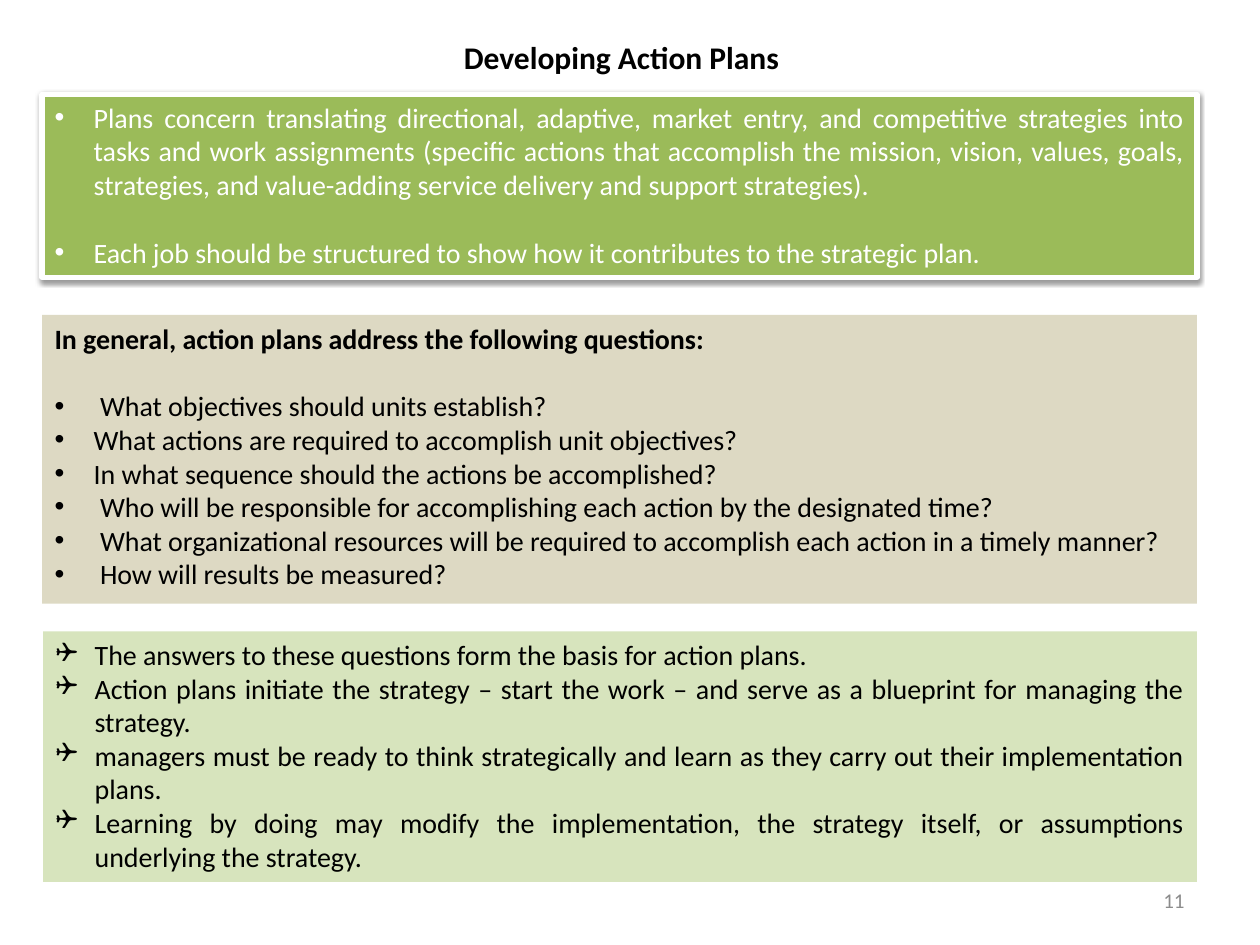
from dataclasses import dataclass
from lxml.etree import SubElement
from pptx import Presentation
from pptx.dml.color import RGBColor as Color
from pptx.enum.shapes import MSO_SHAPE as Shape
from pptx.enum.text import MSO_ANCHOR as Anchor, MSO_AUTO_SIZE as AutoSize, PP_ALIGN as Align
from pptx.oxml.ns import qn
from pptx.util import Cm, Pt


@dataclass(frozen=True)
class Theme:
    font: str = "Calibri"
    title: int = 18
    body: int = 16
    number: int = 12
    blank_line: float = 19.5
    black: str = "000000"
    white: str = "FFFFFF"
    gray: str = "8C8C8C"
    green: str = "9BBB59"
    tan: str = "DDD9C3"
    pale_green: str = "D7E4BD"


theme = Theme()


def add_span(para, text, size, color, bold=False):
    span = para.add_run()
    span.text = text
    span.font.name = theme.font
    span.font.size = Pt(size)
    span.font.bold = bold
    span.font.color.rgb = Color.from_string(color)


def add_bullet(para, mark, typeface):
    props = para._p.get_or_add_pPr()
    props.set("marL", str(Cm(0.79)))
    props.set("indent", str(Cm(-0.79)))
    SubElement(props, qn("a:buFont"), typeface=typeface)
    SubElement(props, qn("a:buChar"), char=mark)


deck = Presentation()
deck.slide_width, deck.slide_height = Cm(25.4), Cm(19.05)
page = deck.slides.add_slide(deck.slide_layouts[6])

labels = [
    ("11", (18.2, 17.65, 5.93, 1.01), theme.number, theme.gray, False, Align.RIGHT, Anchor.MIDDLE, True),
    ("Developing Action Plans", (9.1, 0.64, 7.06, 1.02), theme.title, theme.black, True, Align.LEFT, Anchor.TOP, False),
]
for text, place, size, color, bold, align, anchor, wrap in labels:
    box = page.shapes.add_textbox(*map(Cm, place))
    frame = box.text_frame
    frame.word_wrap = wrap
    frame.vertical_anchor = anchor
    para = frame.paragraphs[0]
    para.alignment = align
    add_span(para, text, size, color, bold)

concerns = [
    "Plans concern translating directional, adaptive, market entry, and competitive strategies into tasks and work assignments (speciﬁc actions that accomplish the mission, vision, values, goals, strategies, and value-adding service delivery and support strategies).",
    "Each job should be structured to show how it contributes to the strategic plan.",
]
questions = [
    "In general, action plans address the following questions:",
    " What objectives should units establish?",
    "What actions are required to accomplish unit objectives?",
    "In what sequence should the actions be accomplished?",
    " Who will be responsible for accomplishing each action by the designated time?",
    " What organizational resources will be required to accomplish each action in a timely manner?",
    " How will results be measured?",
]
answers = [
    "The answers to these questions form the basis for action plans. ",
    "Action plans initiate the strategy – start the work – and serve as a blueprint for managing the strategy. ",
    "managers must be ready to think strategically and learn as they carry out their implementation plans. ",
    "Learning by doing may modify the implementation, the strategy itself, or assumptions underlying the strategy. ",
]

panels = [
    (concerns, (0.85, 1.9, 23.28, 3.69), theme.green, theme.white, Align.JUSTIFY, "•", "Arial", False, True),
    (questions, (0.85, 6.35, 23.28, 5.82), theme.tan, theme.black, Align.LEFT, "•", "Arial", True, True),
    (answers, (0.87, 12.73, 23.26, 5.05), theme.pale_green, theme.black, Align.JUSTIFY, "❑", "Wingdings", False, False),
]
boxes = []
for lines, place, fill, color, align, mark, typeface, has_heading, has_gap in panels:
    box = page.shapes.add_shape(Shape.RECTANGLE, *map(Cm, place))
    box.shadow.inherit = False
    box.fill.solid()
    box.fill.fore_color.rgb = Color.from_string(fill)
    box.line.fill.background()
    frame = box.text_frame
    frame.word_wrap = True
    frame.auto_size = AutoSize.SHAPE_TO_FIT_TEXT
    frame.vertical_anchor = Anchor.TOP
    for index, line in enumerate(lines):
        para = frame.paragraphs[0] if index == 0 else frame.add_paragraph()
        para.alignment = align
        if has_gap and index == 1:
            para.space_before = Pt(theme.blank_line)
        is_heading = has_heading and index == 0
        if not is_heading:
            add_bullet(para, mark, typeface)
        add_span(para, line, theme.body, color, is_heading)
    boxes.append(box)

concerns_box = boxes[0]
concerns_box.line.color.rgb = Color.from_string(theme.white)
concerns_box.line.width = Pt(3)
effects = concerns_box._element.spPr.find(qn("a:effectLst"))
shadow = SubElement(effects, qn("a:outerShdw"), blurRad=str(Pt(3.1)), dist=str(Pt(1.6)), dir="5400000", rotWithShape="0")
shade = SubElement(shadow, qn("a:srgbClr"), val=theme.black)
SubElement(shade, qn("a:alpha"), val="38000")

deck.save("out.pptx")
